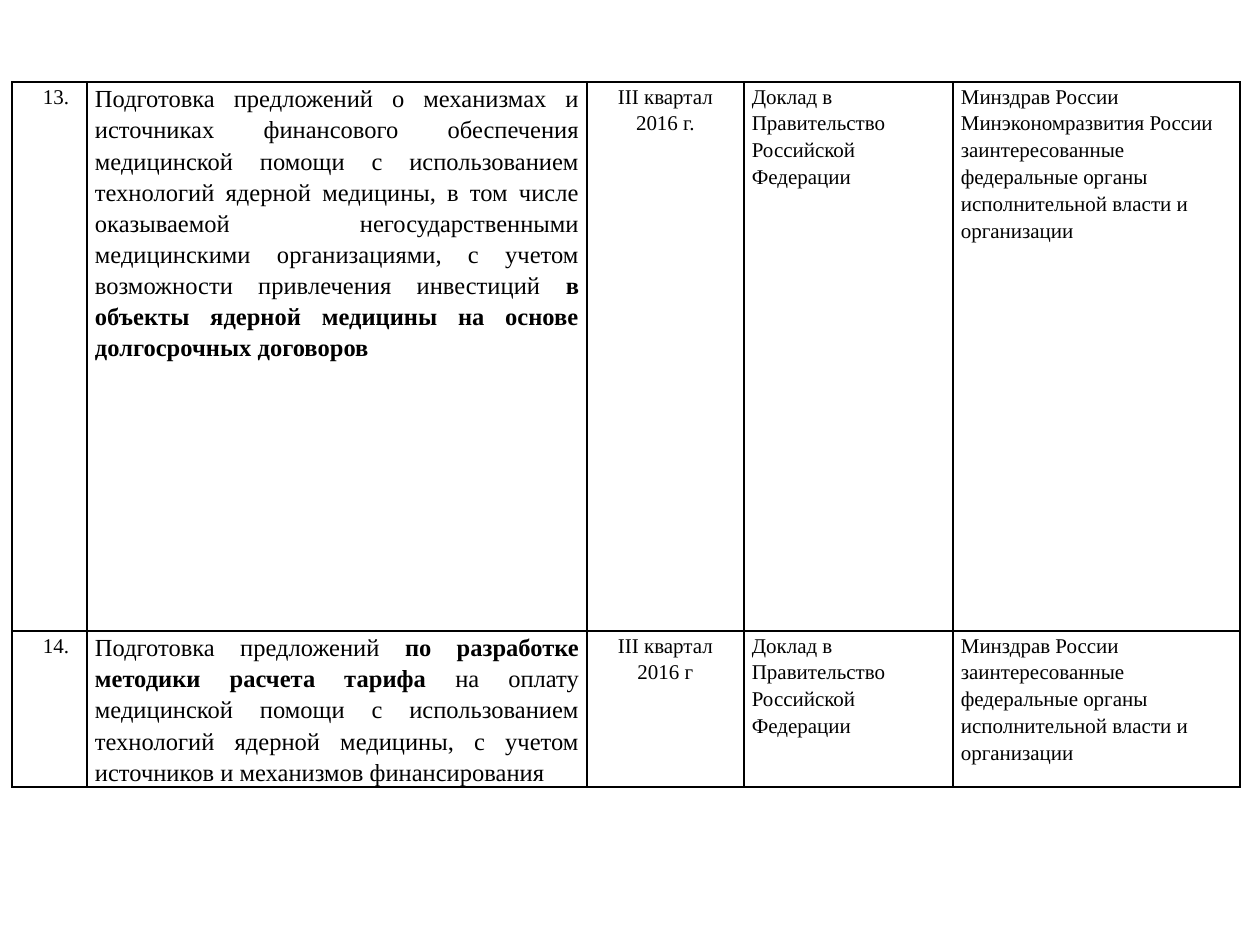
import pptx
import pptx.dml.color
import pptx.enum.text
import pptx.oxml
import pptx.oxml.ns
import pptx.util

PX = 914400 // 126
FONT = "Times New Roman"
COLORS = {"ink": "000000", "paper": "FFFFFF"}
ALIGN = pptx.enum.text.PP_ALIGN

COLUMN_WIDTHS = [75, 500, 157, 209, 287]
ROW_HEIGHTS = [549, 156]
COLUMN_FORMATS = [
    {"align": ALIGN.CENTER, "indent": 13},
    {"align": ALIGN.JUSTIFY, "size": 14},
    {"align": ALIGN.CENTER},
    {},
    {},
]

REPORT = "Доклад в Правительство Российской Федерации"
HEALTH_MINISTRY = "Минздрав России"
OTHER_BODIES = "заинтересованные федеральные органы исполнительной власти и организации"

# Each cell lists paragraphs; each paragraph lists (text, bold) runs.
MEASURES = [
    [
        [[("13.", False)]],
        [[
            ("Подготовка предложений о механизмах и источниках финансового обеспечения "
             "медицинской помощи с использованием технологий ядерной медицины, в том числе "
             "оказываемой негосударственными медицинскими организациями, с учетом "
             "возможности привлечения инвестиций ", False),
            ("в объекты ядерной медицины на основе долгосрочных договоров", True),
        ]],
        [[("III квартал 2016 г.", False)]],
        [[(REPORT, False)]],
        [[(HEALTH_MINISTRY, False)], [("Минэкономразвития России", False)], [(OTHER_BODIES, False)]],
    ],
    [
        [[("14.", False)]],
        [[
            ("Подготовка предложений ", False),
            ("по разработке методики расчета тарифа ", True),
            ("на оплату медицинской помощи с использованием технологий ядерной медицины, "
             "с учетом источников и механизмов финансирования", False),
        ]],
        [[("III квартал 2016 г", False)]],
        [[(REPORT, False)]],
        [[(HEALTH_MINISTRY, False)], [(OTHER_BODIES, False)]],
    ],
]


def px(length):
    """Turn whole pixels into EMU."""
    return pptx.util.Emu(length * PX)


def rgb(name):
    """Look up a named colour."""
    return pptx.dml.color.RGBColor.from_string(COLORS[name])


def write_text(frame, paragraphs, size=12, align=ALIGN.LEFT, indent=0):
    """Fill a text frame with paragraphs of (text, bold) runs."""
    for index, runs in enumerate(paragraphs):
        paragraph = frame.paragraphs[0] if index == 0 else frame.add_paragraph()
        paragraph.alignment = align
        paragraph.line_spacing = 1.15
        if indent:
            paragraph._p.get_or_add_pPr().set("marL", str(px(indent)))
        for text, bold in runs:
            run = paragraph.add_run()
            run.text = text
            run.font.name = FONT
            run.font.size = pptx.util.Pt(size)
            run.font.bold = bold
            run.font.color.rgb = rgb("ink")


def style_cell(cell):
    """Give a cell its margins, thin borders and plain fill."""
    cell.margin_left = cell.margin_right = px(8)
    cell.margin_top = cell.margin_bottom = 0
    cell_properties = cell._tc.get_or_add_tcPr()
    for side in "LRTB":
        cell_properties.append(pptx.oxml.parse_xml(
            f'<a:ln{side} {pptx.oxml.ns.nsdecls("a")} w="{pptx.util.Pt(1)}">'
            f'<a:solidFill><a:srgbClr val="{COLORS["ink"]}"/></a:solidFill></a:ln{side}>'
        ))
    cell.fill.solid()
    cell.fill.fore_color.rgb = rgb("paper")


def add_measures_table(slide, left, top):
    """Add the table of planned measures."""
    table = slide.shapes.add_table(
        len(ROW_HEIGHTS), len(COLUMN_WIDTHS), px(left), px(top),
        px(sum(COLUMN_WIDTHS)), px(sum(ROW_HEIGHTS)),
    ).table
    table.first_row = table.horz_banding = False
    for column, width in zip(table.columns, COLUMN_WIDTHS):
        column.width = px(width)
    for row, height, measure in zip(table.rows, ROW_HEIGHTS, MEASURES):
        row.height = px(height)
        for cell, paragraphs, text_format in zip(row.cells, measure, COLUMN_FORMATS):
            style_cell(cell)
            write_text(cell.text_frame, paragraphs, **text_format)


def main():
    """Build and save the slide."""
    presentation = pptx.Presentation()
    presentation.slide_width = px(1260)
    presentation.slide_height = px(945)
    slide = presentation.slides.add_slide(presentation.slide_layouts[6])
    add_measures_table(slide, left=12, top=82)
    presentation.save("out.pptx")


if __name__ == "__main__":
    main()
